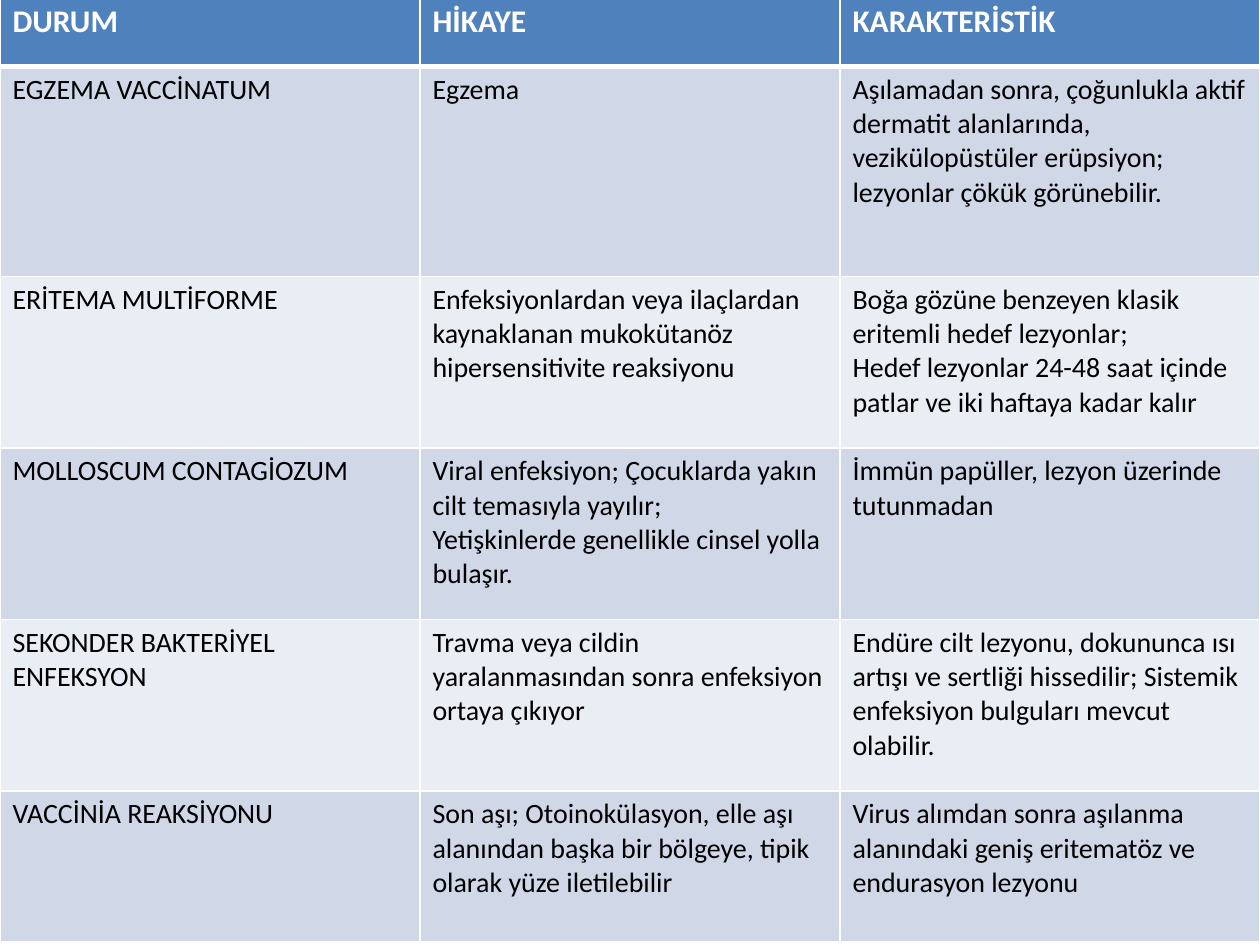
import pptx
import pptx.dml.color
import pptx.oxml
import pptx.oxml.ns
import pptx.util

Pt = pptx.util.Pt
FONT = "Calibri"
WHITE, BLACK, BLUE = "FFFFFF", "000000", "4F81BD"
BANDS = ["D0D8E8", "E9EDF4"]
ROW_HEIGHTS = [40, 120, 98, 98, 98, 86]
ROWS = [
    ["DURUM", "HİKAYE", "KARAKTERİSTİK"],
    ["EGZEMA VACCİNATUM", "Egzema",
     "Aşılamadan sonra, çoğunlukla aktif dermatit alanlarında, "
     "vezikülopüstüler erüpsiyon; lezyonlar çökük görünebilir."],
    ["ERİTEMA MULTİFORME",
     "Enfeksiyonlardan veya ilaçlardan kaynaklanan mukokütanöz "
     "hipersensitivite reaksiyonu",
     "Boğa gözüne benzeyen klasik eritemli hedef lezyonlar;\n"
     "Hedef lezyonlar 24-48 saat içinde patlar ve iki haftaya kadar kalır"],
    ["MOLLOSCUM CONTAGİOZUM",
     "Viral enfeksiyon; Çocuklarda yakın cilt temasıyla yayılır;\n"
     "Yetişkinlerde genellikle cinsel yolla bulaşır.",
     "İmmün papüller, lezyon üzerinde tutunmadan"],
    ["SEKONDER BAKTERİYEL ENFEKSYON",
     "Travma veya cildin yaralanmasından sonra enfeksiyon ortaya çıkıyor",
     "Endüre cilt lezyonu, dokununca ısı artışı ve sertliği hissedilir; "
     "Sistemik enfeksiyon bulguları mevcut olabilir."],
    ["VACCİNİA REAKSİYONU",
     "Son aşı; Otoinokülasyon, elle aşı alanından başka bir bölgeye, "
     "tipik olarak yüze iletilebilir",
     "Virus alımdan sonra aşılanma alanındaki geniş eritematöz ve "
     "endurasyon lezyonu"],
]


def rgb(value):
    return pptx.dml.color.RGBColor.from_string(value)


def set_borders(cell, top, bottom):
    tcPr = cell._tc.get_or_add_tcPr()
    for side, width in (("L", 1), ("R", 1), ("T", top), ("B", bottom)):
        tcPr.append(pptx.oxml.parse_xml(
            f'<a:ln{side} {pptx.oxml.ns.nsdecls("a")} w="{Pt(width)}">'
            f'<a:solidFill><a:srgbClr val="{WHITE}"/></a:solidFill>'
            f'</a:ln{side}>'))


def format_cell(cell, text, row):
    header = row == 0
    set_borders(cell, 3 if row == 1 else 1, 3 if header else 1)
    cell.fill.solid()
    cell.fill.fore_color.rgb = rgb(BLUE if header else BANDS[(row - 1) % 2])
    cell.text = text
    for p in cell.text_frame.paragraphs:
        p.font.name = FONT
        p.font.size = Pt(18 if header else 16)
        p.font.bold = header
        p.font.color.rgb = rgb(WHITE if header else BLACK)


def add_condition_table(slide, left, top, width, height):
    table = slide.shapes.add_table(
        len(ROWS), len(ROWS[0]), Pt(left), Pt(top), Pt(width), Pt(height)).table
    for column in table.columns:
        column.width = Pt(width / len(ROWS[0]))
    for i, (texts, share) in enumerate(zip(ROWS, ROW_HEIGHTS)):
        table.rows[i].height = Pt(height * share / sum(ROW_HEIGHTS))
        for j, text in enumerate(texts):
            format_cell(table.cell(i, j), text, i)


def main():
    prs = pptx.Presentation()
    prs.slide_width, prs.slide_height = Pt(720), Pt(540)
    slide = prs.slides.add_slide(prs.slide_layouts[6])
    add_condition_table(slide, 0, -2, 720, 540)
    prs.save("out.pptx")


if __name__ == "__main__":
    main()
